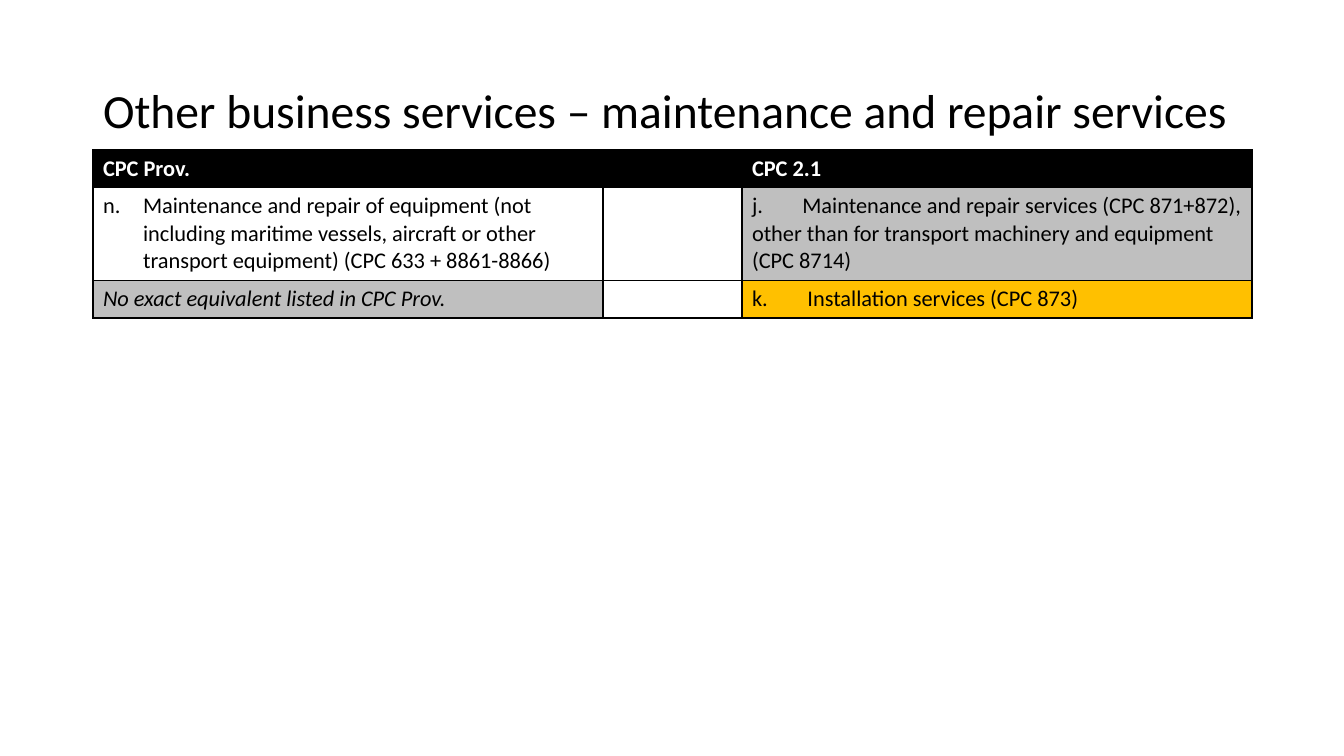
from lxml.etree import SubElement
from pptx import Presentation
from pptx.dml.color import RGBColor
from pptx.enum.text import MSO_ANCHOR, MSO_AUTO_SIZE, PP_ALIGN
from pptx.oxml.ns import qn
from pptx.util import Emu, Pt

# Content: each cell is (text, fill, font colour, style)
TITLE = "Other business services – maintenance and repair services"
BLACK, WHITE, GREY, GOLD = "000000", "FFFFFF", "BFBFBF", "FFC000"
BLANK = ("", None, BLACK, "")
ROWS = [
    [("CPC Prov.", BLACK, WHITE, "bold"),
     ("", BLACK, WHITE, "bold"),
     ("CPC 2.1", BLACK, WHITE, "bold")],
    [("n.\tMaintenance and repair of equipment (not including maritime vessels, "
      "aircraft or other transport equipment) (CPC 633 + 8861-8866)",
      None, BLACK, "hanging"),
     BLANK,
     ("j.\tMaintenance and repair services (CPC 871+872), other than for "
      "transport machinery and equipment (CPC 8714)", GREY, BLACK, "")],
    [("No exact equivalent listed in CPC Prov.", GREY, BLACK, "italic"),
     BLANK,
     ("k.\t Installation services (CPC 873)", GOLD, BLACK, "")],
]
LEFT, WIDTH = 93, 1159
COLS = [510, 139, 510]
HEIGHTS = [37, 93, 37]
INDENT = 40


def px(n):
    return Emu(round(n * 914400 / 100.8))


def color(code):
    return RGBColor.from_string(code)


def style(par, size, code):
    par.font.name = "Calibri"
    par.font.size = Pt(size)
    par.font.color.rgb = color(code)


def border(cell):
    props = cell._tc.get_or_add_tcPr()
    for i, side in enumerate(("lnL", "lnR", "lnT", "lnB")):
        line = props.makeelement(qn(f"a:{side}"), {"w": str(Pt(1))})
        fill = SubElement(line, qn("a:solidFill"))
        SubElement(fill, qn("a:srgbClr"), val=BLACK)
        props.insert(i, line)  # borders come before the fill


def write(cell, text, fill, code, look):
    cell.text = text
    par = cell.text_frame.paragraphs[0]
    style(par, 16, code)
    par.font.bold = look == "bold"
    par.font.italic = look == "italic"
    if look == "hanging":
        props = par._p.get_or_add_pPr()
        props.set("marL", str(px(INDENT)))
        props.set("indent", str(-px(INDENT)))
    if fill:
        cell.fill.solid()
        cell.fill.fore_color.rgb = color(fill)
    else:
        cell.fill.background()
    border(cell)


deck = Presentation()
deck.slide_width, deck.slide_height = px(1344), px(756)
slide = deck.slides.add_slide(deck.slide_layouts[5])

# Title
title = slide.shapes.title
title.left, title.top, title.width, title.height = map(px, (LEFT, 40, WIDTH, 146))
frame = title.text_frame
frame.text = TITLE
frame.word_wrap = True
frame.auto_size = MSO_AUTO_SIZE.NONE
frame.vertical_anchor = MSO_ANCHOR.MIDDLE
head = frame.paragraphs[0]
head.alignment = PP_ALIGN.LEFT
head.line_spacing = 0.9
style(head, 34, BLACK)

# Comparison table
table = slide.shapes.add_table(
    len(ROWS), len(COLS), px(LEFT), px(150), px(WIDTH), px(sum(HEIGHTS))).table
table.first_row = table.horz_banding = False
for col, wide in zip(table.columns, COLS):
    col.width = px(wide)
for row, high, cells in zip(table.rows, HEIGHTS, ROWS):
    row.height = px(high)
    for cell, item in zip(row.cells, cells):
        write(cell, *item)

deck.save("out.pptx")
